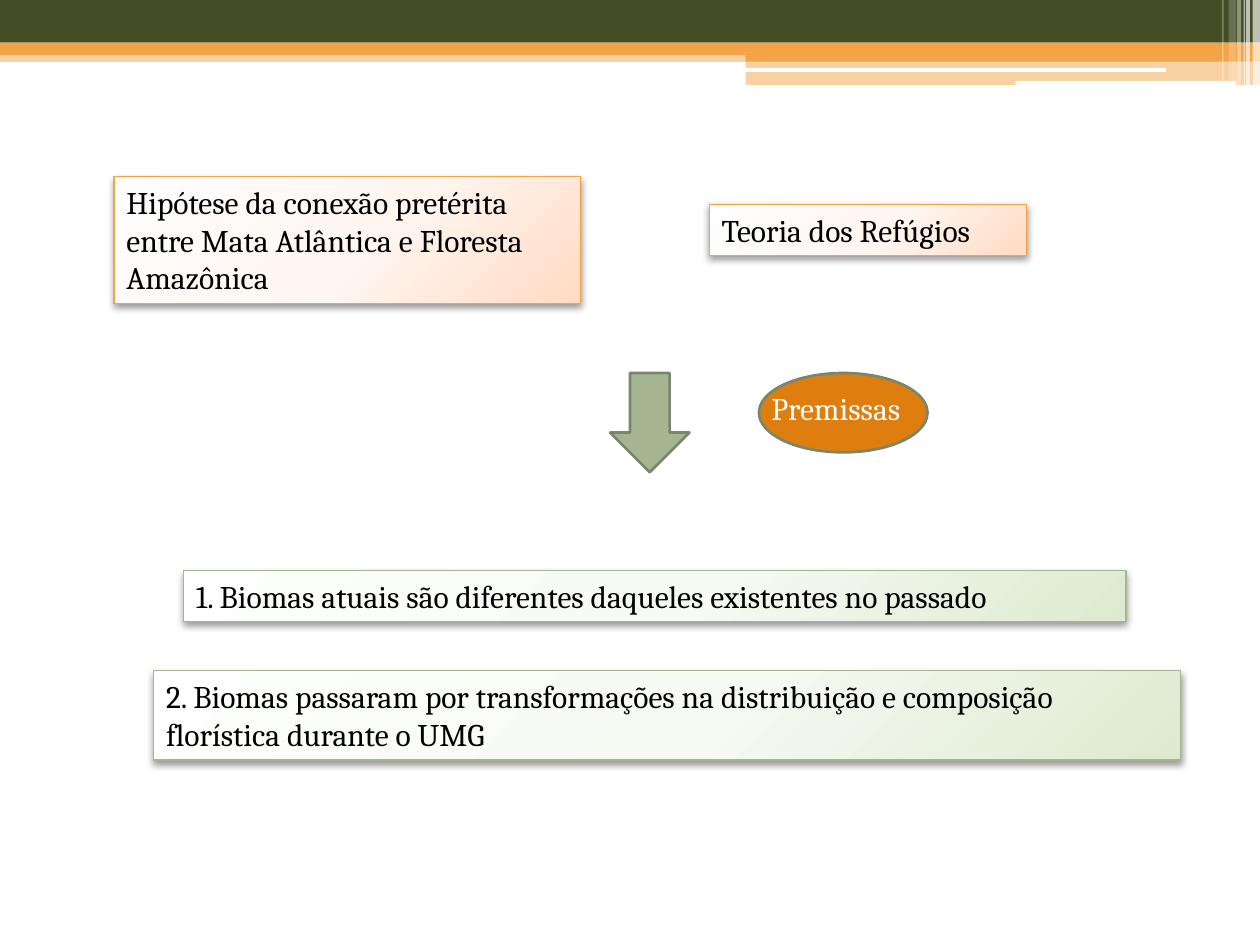
import pptx
import pptx.dml.color
import pptx.enum.shapes
import pptx.enum.text
import pptx.oxml
import pptx.oxml.ns
import pptx.util

Cm = pptx.util.Cm
Shape = pptx.enum.shapes.MSO_SHAPE
NS = pptx.oxml.ns.nsdecls("a")
ORANGE, DARK_GREEN, SAGE, WHITE = "F3A447", "444D26", "A5B592", "FFFFFF"
PEACH_TINTS = ["FFFEFE", "FFF6F1", "FFDBC3"]
GREEN_TINTS = ["FEFFFE", "F6FAF3", "DDEACF"]


def color(value):
    return pptx.dml.color.RGBColor.from_string(value)


class SlideBuilder:
    """Holds the text style and current slide, and draws each kind of element."""

    def __init__(self, slide, font="Cambria", size=18):
        self.slide = slide
        self.font = font
        self.size = size

    def shape(self, kind, place, fill=None, line=None, width=1.5, alpha=100):
        figure = self.slide.shapes.add_shape(kind, *map(Cm, place))
        figure.shadow.inherit = False
        if fill:
            figure.fill.solid()
            figure.fill.fore_color.rgb = color(fill)
        if alpha < 100:
            tone = figure._element.spPr.find(".//" + pptx.oxml.ns.qn("a:srgbClr"))
            tone.append(pptx.oxml.parse_xml(f'<a:alpha {NS} val="{alpha * 1000}"/>'))
        if line:
            figure.line.color.rgb = color(line)
            figure.line.width = pptx.util.Pt(width)
        else:
            figure.line.fill.background()
        return figure

    def add_text(self, holder, text, ink, wrap=True):
        frame = holder.text_frame
        frame.word_wrap = wrap
        frame.auto_size = pptx.enum.text.MSO_AUTO_SIZE.SHAPE_TO_FIT_TEXT
        frame.vertical_anchor = pptx.enum.text.MSO_ANCHOR.TOP
        paragraph = frame.paragraphs[0]
        paragraph.alignment = pptx.enum.text.PP_ALIGN.LEFT
        run = paragraph.add_run()
        run.text = text
        run.font.name = self.font
        run.font.size = pptx.util.Pt(self.size)
        run.font.color.rgb = color(ink)

    def statement(self, place, text, tints, border):
        card = self.shape(Shape.RECTANGLE, place, line=border, width=0.75)
        stops = "".join(
            f'<a:gs pos="{position * 1000}"><a:srgbClr val="{tint}"/></a:gs>'
            for position, tint in zip((0, 55, 100), tints))
        properties = card._element.spPr
        properties.find(pptx.oxml.ns.qn("a:prstGeom")).addnext(pptx.oxml.parse_xml(
            f'<a:gradFill {NS} rotWithShape="1"><a:gsLst>{stops}</a:gsLst>'
            '<a:path path="circle"><a:fillToRect l="-40000" t="-90000" '
            'r="140000" b="190000"/></a:path></a:gradFill>'))
        properties.find(pptx.oxml.ns.qn("a:effectLst")).append(pptx.oxml.parse_xml(
            f'<a:outerShdw {NS} blurRad="{pptx.util.Pt(4.1)}" '
            f'dist="{pptx.util.Pt(2)}" dir="5400000" rotWithShape="0">'
            '<a:srgbClr val="000000"><a:alpha val="40000"/></a:srgbClr></a:outerShdw>'))
        self.add_text(card, text, "000000")

    def label(self, place, text, ink):
        self.add_text(self.slide.shapes.add_textbox(*map(Cm, place)), text, ink, wrap=False)

    def header(self):
        for place, fill, alpha in [
            ((0, 1.02, 25.4, 0.23), ORANGE, 50),
            ((0, 0, 25.4, 0.86), DARK_GREEN, 100),
            ((0, 0.86, 25.4, 0.25), ORANGE, 100),
            ((15.03, 0.99, 10.37, 0.25), ORANGE, 100),
            ((15.03, 1.22, 10.37, 0.5), ORANGE, 50),
        ]:
            self.shape(Shape.RECTANGLE, place, fill, alpha=alpha)
        for place in [(15.01, 1.37, 8.5, 0.08), (20.47, 1.63, 4.45, 0.1)]:
            self.shape(Shape.ROUNDED_RECTANGLE, place, WHITE)
        for left, width, height, alpha in [
            (25.25, 0.15, 1.73, 65), (25.12, 0.08, 1.73, 65), (25.07, 0.03, 1.73, 60),
            (24.94, 0.08, 1.73, 40), (24.77, 0.15, 1.63, 20), (24.64, 0.03, 1.63, 30),
        ]:
            self.shape(Shape.RECTANGLE, (left, 0, width, height), WHITE, alpha=alpha)


def main():
    deck = pptx.Presentation()
    deck.slide_width, deck.slide_height = Cm(25.4), Cm(19.05)
    builder = SlideBuilder(deck.slides.add_slide(deck.slide_layouts[6]))
    builder.header()
    builder.shape(Shape.OVAL, (15.3, 7.52, 3.4, 1.6), "DD7E0E", "7A866C")
    for place, hypothesis in [
        ((2.3, 3.56, 9.4, 2.56),
         "Hipótese da conexão pretérita entre Mata Atlântica e Floresta Amazônica"),
        ((14.3, 4.12, 6.4, 1.03), "Teoria dos Refúgios"),
    ]:
        builder.statement(place, hypothesis, PEACH_TINTS, ORANGE)
    builder.shape(Shape.DOWN_ARROW, (12.3, 7.52, 1.6, 2), SAGE, "7A866C")
    for place, premise in [
        ((3.7, 11.5, 19, 1.03),
         "1. Biomas atuais são diferentes daqueles existentes no passado"),
        ((3.1, 13.52, 20.7, 1.8),
         "2. Biomas passaram por transformações na distribuição e composição "
         "florística durante o UMG"),
    ]:
        builder.statement(place, premise, GREEN_TINTS, SAGE)
    builder.label((15.3, 7.72, 3.38, 1.03), "Premissas", WHITE)
    deck.save("out.pptx")


if __name__ == "__main__":
    main()
